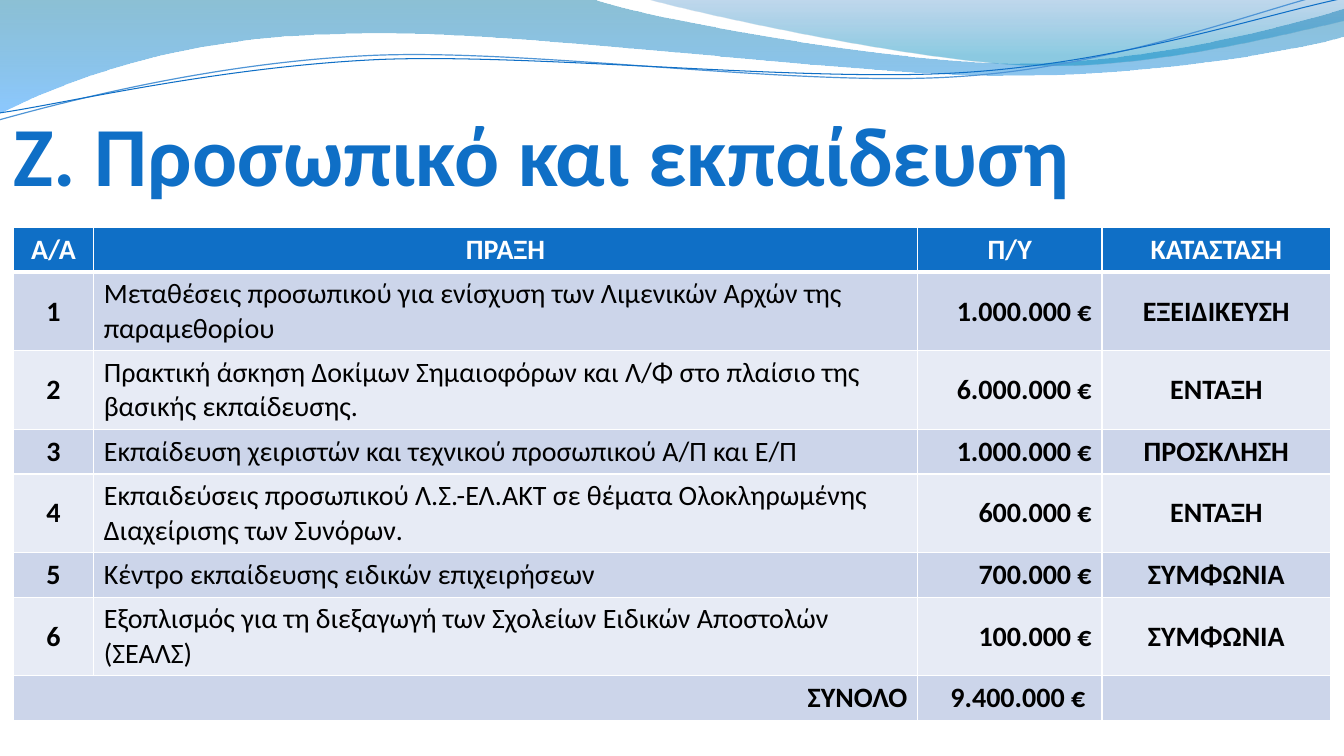
import math
import pptx
import pptx.util
import pptx.dml.color
import pptx.enum.text
import pptx.oxml
import pptx.oxml.ns
from lxml import etree

Inches, Pt = pptx.util.Inches, pptx.util.Pt
RGB = pptx.dml.color.RGBColor.from_string
Align, Anchor = pptx.enum.text.PP_ALIGN, pptx.enum.text.MSO_ANCHOR
qn = pptx.oxml.ns.qn
COLORS = {"blue": "0F6FC6", "light blue": "4F95D6", "white": "FFFFFF", "black": "000000",
          "odd row": "CCD5EA", "even row": "E7EBF5"}
FONT = "Calibri"
WAVE_TILT = -2.7

presentation = pptx.Presentation()
presentation.slide_width, presentation.slide_height = Inches(13.33), Inches(7.5)
slide = presentation.slides.add_slide(presentation.slide_layouts[5])


def add_wave(start, segments, closed):
    """Draw a path of lines (one point) and Bezier curves (three points), in inches."""
    points = [(Inches(x), Inches(y)) for segment in segments for x, y in segment]
    builder = slide.shapes.build_freeform(Inches(start[0]), Inches(start[1]), scale=1.0)
    builder.add_line_segments(points, close=closed)
    shape = builder.convert_to_shape()
    shape.shadow.inherit = False
    # Join the three points of each curve into one Bezier element
    lines = iter(list(shape.element.iter(qn("a:lnTo"))))
    for segment in segments:
        first, *others = [next(lines) for point in segment]
        if others:
            curve = etree.Element(qn("a:cubicBezTo"))
            first.addprevious(curve)
            for line in (first, *others):
                curve.append(line[0])
                line.getparent().remove(line)
    return shape


def add_run(paragraph, text, size, color, bold):
    run = paragraph.add_run()
    run.text = text
    run.font.name, run.font.size, run.font.bold = FONT, Pt(size), bold
    run.font.color.rgb = RGB(COLORS[color])


# Filled waves: start, segments, gradient stops (position, colour, opacity)
filled_waves = [
    ((0, 0),
     [[(5.87, -0.01)],
      [(6.34, 0.17), (8.85, 0.63), (10.11, 0.63)],
      [(11.38, 0.63), (12.78, 0.26), (13.33, 0.09)],
      [(13.35, 0.36)],
      [(13.11, 0.44), (11.6, 0.76), (9.94, 0.75)],
      [(8.29, 0.75), (5.09, 0.28), (3.43, 0.34)],
      [(1.72, 0.36), (0.61, 0.83), (-0.01, 1.13)]],
     [(0, "0074A1", 45), (1, "2D9BFF", 55)]),
    ((6.39, -0.01),
     [[(6.79, 0.11), (9.09, 0.62), (10.25, 0.65)],
      [(11.41, 0.69), (12.82, 0.32), (13.33, 0.21)],
      [(13.33, 0)]],
     [(0, "317EC4", 30), (0.8, "008BBF", 45)]),
]
for start, segments, stops in filled_waves:
    wave = add_wave(start, segments, True)
    wave.line.fill.background()
    wave.fill.gradient()
    wave.fill.gradient_angle = 270
    for stop, (position, color, opacity) in zip(wave.fill.gradient_stops, stops):
        stop.position = position
        stop.color.rgb = RGB(color)
    for element, (position, color, opacity) in zip(wave.element.iter(qn("a:gs")), stops):
        etree.SubElement(element[0], qn("a:alpha"), val=str(opacity * 1000))

# Thin wave lines, tilted about their centres: points, centre, colour, width
wave_lines = [
    ([(-0.01, 1.19), (0.64, 1.01), (2.11, 0.62), (3.69, 0.55), (5.27, 0.48), (7.9, 0.87),
      (9.5, 0.76), (11.1, 0.66), (12.52, 0.08), (13.31, -0.1)], (6.65, 0.58), "light blue", 0.85),
    ([(0, 1.12), (0.63, 1.03), (2.18, 0.66), (3.78, 0.59), (5.37, 0.53), (7.96, 0.82),
      (9.55, 0.72), (11.15, 0.62), (12.55, 0.14), (13.34, -0.02)], (6.67, 0.59), "blue", 0.75),
]
cosine, sine = math.cos(math.radians(WAVE_TILT)), math.sin(math.radians(WAVE_TILT))
for points, (center_x, center_y), color, width in wave_lines:
    level = [(center_x + (x - center_x) * cosine + (y - center_y) * sine,
              center_y - (x - center_x) * sine + (y - center_y) * cosine) for x, y in points]
    wave = add_wave(level[0], [level[i:i + 3] for i in range(1, len(level), 3)], False)
    wave.rotation = WAVE_TILT
    wave.fill.background()
    wave.line.color.rgb = RGB(COLORS[color])
    wave.line.width = Pt(width)

# Title
title = slide.shapes.title
title.left, title.top, title.width, title.height = map(Inches, (0.13, 1.15, 11.89, 0.87))
frame = title.text_frame
frame.auto_size = pptx.enum.text.MSO_AUTO_SIZE.NONE
frame.word_wrap = True
frame.vertical_anchor = Anchor.BOTTOM
frame.margin_left = frame.margin_right = frame.margin_bottom = 0
frame.margin_top = Inches(0.05)
frame.paragraphs[0].alignment = Align.LEFT
add_run(frame.paragraphs[0], "Ζ. Προσωπικό και εκπαίδευση", 60, "blue", True)

# Table contents
rows = [
    ("A/A", "ΠΡΑΞΗ", "Π/Υ", "ΚΑΤΑΣΤΑΣΗ"),
    ("1", "Μεταθέσεις προσωπικού για ενίσχυση των Λιμενικών Αρχών της παραμεθορίου",
     "1.000.000 €", "ΕΞΕΙΔΙΚΕΥΣΗ"),
    ("2", "Πρακτική άσκηση Δοκίμων Σημαιοφόρων και Λ/Φ στο πλαίσιο της βασικής εκπαίδευσης.",
     "6.000.000 €", "ΕΝΤΑΞΗ"),
    ("3", "Εκπαίδευση χειριστών και τεχνικού προσωπικού Α/Π και Ε/Π", "1.000.000 €", "ΠΡΟΣΚΛΗΣΗ"),
    ("4", "Εκπαιδεύσεις προσωπικού Λ.Σ.-ΕΛ.ΑΚΤ σε θέματα Ολοκληρωμένης Διαχείρισης των Συνόρων.",
     "600.000 €", "ΕΝΤΑΞΗ"),
    ("5", "Κέντρο εκπαίδευσης ειδικών επιχειρήσεων", "700.000 €", "ΣΥΜΦΩΝΙΑ"),
    ("6", "Εξοπλισμός για τη διεξαγωγή των Σχολείων Ειδικών Αποστολών (ΣΕΑΛΣ)",
     "100.000 €", "ΣΥΜΦΩΝΙΑ"),
    ("ΣΥΝΟΛΟ", "", "9.400.000 € ", ""),
]
column_widths = (0.8, 8.17, 1.83, 2.27)
column_alignments = (Align.CENTER, Align.LEFT, Align.RIGHT, Align.CENTER)
total_row = len(rows) - 1

# Table grid: rows grow with their text
table_frame = slide.shapes.add_table(len(rows), len(column_widths), Inches(0.13), Inches(2.26),
                                     Inches(sum(column_widths)), Inches(4.8))
table = table_frame.table
for column, width in zip(table.columns, column_widths):
    column.width = Inches(width)
for r, row in enumerate(table.rows):
    row.height = Inches(0.33 if r == total_row else 0.41)
table_frame.height = Inches(4.8)
table.cell(total_row, 0).merge(table.cell(total_row, 1))

# Table cells
for r, texts in enumerate(rows):
    for c, text in enumerate(texts):
        cell = table.cell(r, c)
        header = r == 0
        for side in "LRTB":
            thick = (r, side) in ((0, "B"), (1, "T"))
            border = etree.SubElement(cell._tc.get_or_add_tcPr(), qn("a:ln" + side),
                                      w=str(Pt(3 if thick else 1)))
            fill = etree.SubElement(border, qn("a:solidFill"))
            etree.SubElement(fill, qn("a:srgbClr"), val=COLORS["white"])
        cell.fill.solid()
        cell.fill.fore_color.rgb = RGB(
            COLORS["blue" if header else "odd row" if r % 2 else "even row"])
        cell.vertical_anchor = Anchor.TOP if header else Anchor.MIDDLE
        if not text:
            continue
        paragraph = cell.text_frame.paragraphs[0]
        paragraph.alignment = (Align.CENTER if header else
                               Align.RIGHT if r == total_row else column_alignments[c])
        add_run(paragraph, text, 20, "white" if header else "black", header or c != 1)

presentation.save("out.pptx")
